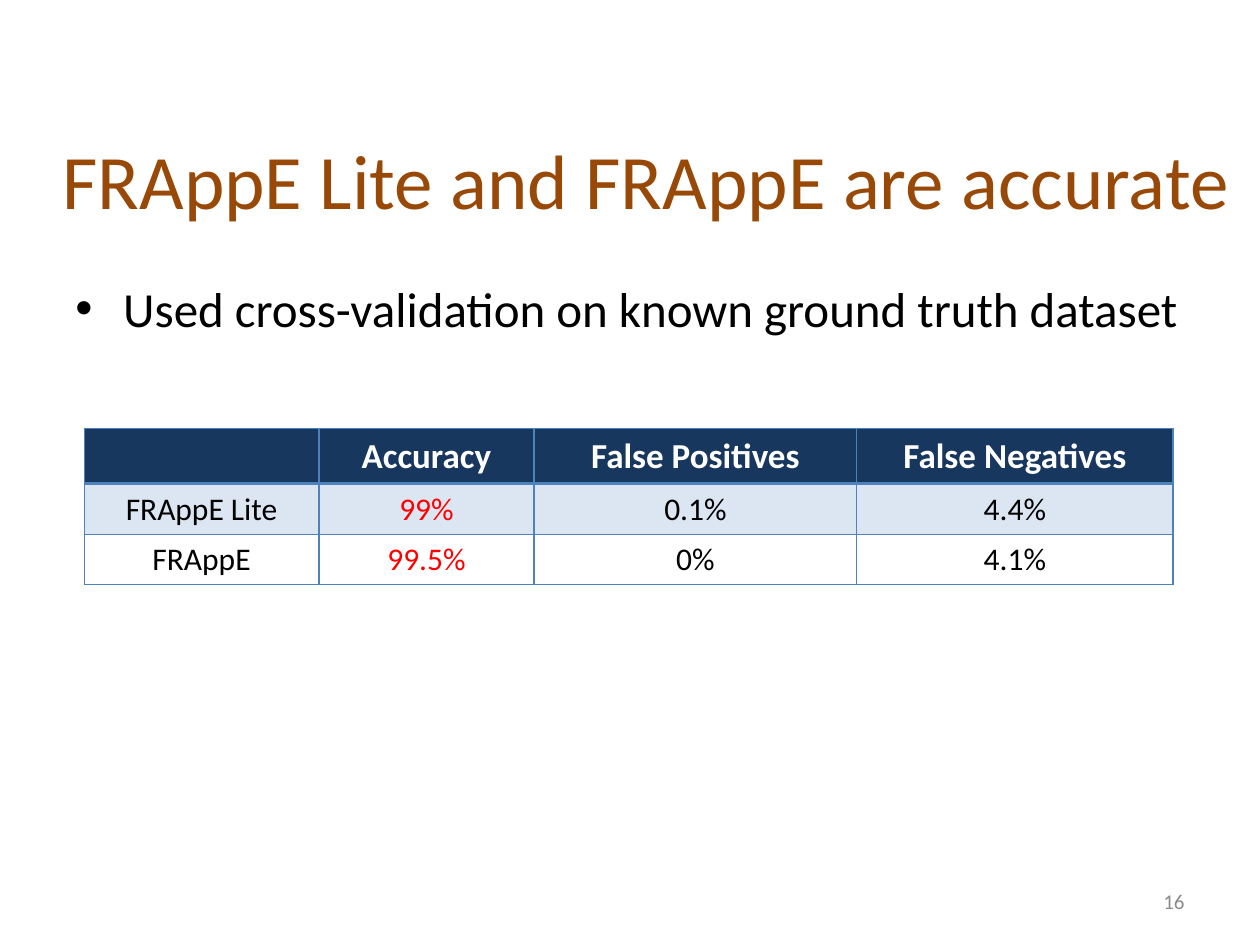
import pptx
import pptx.dml.color
import pptx.enum.text
import pptx.oxml
import pptx.oxml.ns
import pptx.util
from pptx.util import Inches, Pt

ALIGN = pptx.enum.text.PP_ALIGN
ANCHOR = pptx.enum.text.MSO_ANCHOR

FONT = "Calibri"
BLACK, WHITE, RED, GRAY = "000000", "FFFFFF", "FF0000", "8C8C8C"
BROWN, NAVY, BLUE, PALE_BLUE = "984807", "17375E", "4F81BD", "DCE6F2"

TITLE = "FRAppE Lite and FRAppE are accurate"
BULLET = "Used cross-validation on known ground truth dataset"
PAGE_NUMBER = "16"
RESULTS = [
    ["", "Accuracy", "False Positives", "False Negatives"],
    ["FRAppE Lite", "99%", "0.1%", "4.4%"],
    ["FRAppE", "99.5%", "0%", "4.1%"],
]
COLUMN_WIDTHS = [1.86, 1.71, 2.56, 2.51]
ROW_HEIGHTS = [0.44, 0.4, 0.4]
ROW_FILLS = [NAVY, PALE_BLUE, None]
ACCURACY_COLUMN = 1


def rgb(color):
    return pptx.dml.color.RGBColor.from_string(color)


def write(frame, text, size, color=BLACK, bold=False, align=ALIGN.LEFT, bullet=None):
    """Put one formatted paragraph in a text frame."""
    para = frame.paragraphs[0]
    para.alignment = align
    if bullet:
        properties = para._p.get_or_add_pPr()
        properties.set("marL", str(Inches(0.38)))
        properties.set("indent", str(Inches(-0.38)))
        namespace = pptx.oxml.ns.nsdecls("a")
        properties.append(pptx.oxml.parse_xml(f'<a:buFont {namespace} typeface="Arial"/>'))
        properties.append(pptx.oxml.parse_xml(f'<a:buChar {namespace} char="{bullet}"/>'))
    if text:
        para.add_run().text = text
    for font in [para.font] + [span.font for span in para.runs]:
        font.name, font.size, font.bold = FONT, Pt(size), bold
        font.color.rgb = rgb(color)


def add_text(page, text, left, top, width, height, anchor=ANCHOR.TOP, **style):
    box = page.shapes.add_textbox(Inches(left), Inches(top), Inches(width), Inches(height))
    box.text_frame.word_wrap = True
    box.text_frame.vertical_anchor = anchor
    write(box.text_frame, text, **style)


def set_borders(cell, **widths):
    """Draw cell edges, given as points by side in the order L, R, T, B."""
    properties = cell._tc.get_or_add_tcPr()
    for position, (side, width) in enumerate(widths.items()):
        line = pptx.oxml.parse_xml(
            f'<a:ln{side} {pptx.oxml.ns.nsdecls("a")} w="{Pt(width)}">'
            f'<a:solidFill><a:srgbClr val="{BLUE}"/></a:solidFill></a:ln{side}>')
        properties.insert(position, line)


def add_results(page, left, top):
    frame = page.shapes.add_table(
        len(RESULTS), len(COLUMN_WIDTHS), Inches(left), Inches(top),
        Inches(sum(COLUMN_WIDTHS)), Inches(sum(ROW_HEIGHTS)))
    table = frame.table
    for column, width in zip(table.columns, COLUMN_WIDTHS):
        column.width = Inches(width)
    for r, (texts, height, fill) in enumerate(zip(RESULTS, ROW_HEIGHTS, ROW_FILLS)):
        table.rows[r].height = Inches(height)
        header = r == 0
        for c, text in enumerate(texts):
            cell = table.cell(r, c)
            if fill:
                cell.fill.solid()
                cell.fill.fore_color.rgb = rgb(fill)
            else:
                cell.fill.background()
            set_borders(cell, L=1, R=1, T=2 if r == 1 else 1, B=2 if header else 1)
            color = WHITE if header else RED if c == ACCURACY_COLUMN else BLACK
            write(cell.text_frame, text, size=20 if header else 18,
                  color=color, bold=header, align=ALIGN.CENTER)


def main():
    deck = pptx.Presentation()
    deck.slide_width, deck.slide_height = Inches(10), Inches(7.5)
    page = deck.slides.add_slide(deck.slide_layouts[6])
    add_text(page, TITLE, 0.26, 0.79, 9.74, 1.25, anchor=ANCHOR.MIDDLE,
             size=44, color=BROWN, align=ALIGN.CENTER)
    add_text(page, BULLET, 0.5, 2.16, 9, 1.15, size=28, bullet="•")
    add_text(page, PAGE_NUMBER, 7.17, 6.95, 2.33, 0.4, anchor=ANCHOR.MIDDLE,
             size=12, color=GRAY, align=ALIGN.RIGHT)
    add_results(page, 0.67, 3.4)
    deck.save("out.pptx")


if __name__ == "__main__":
    main()
